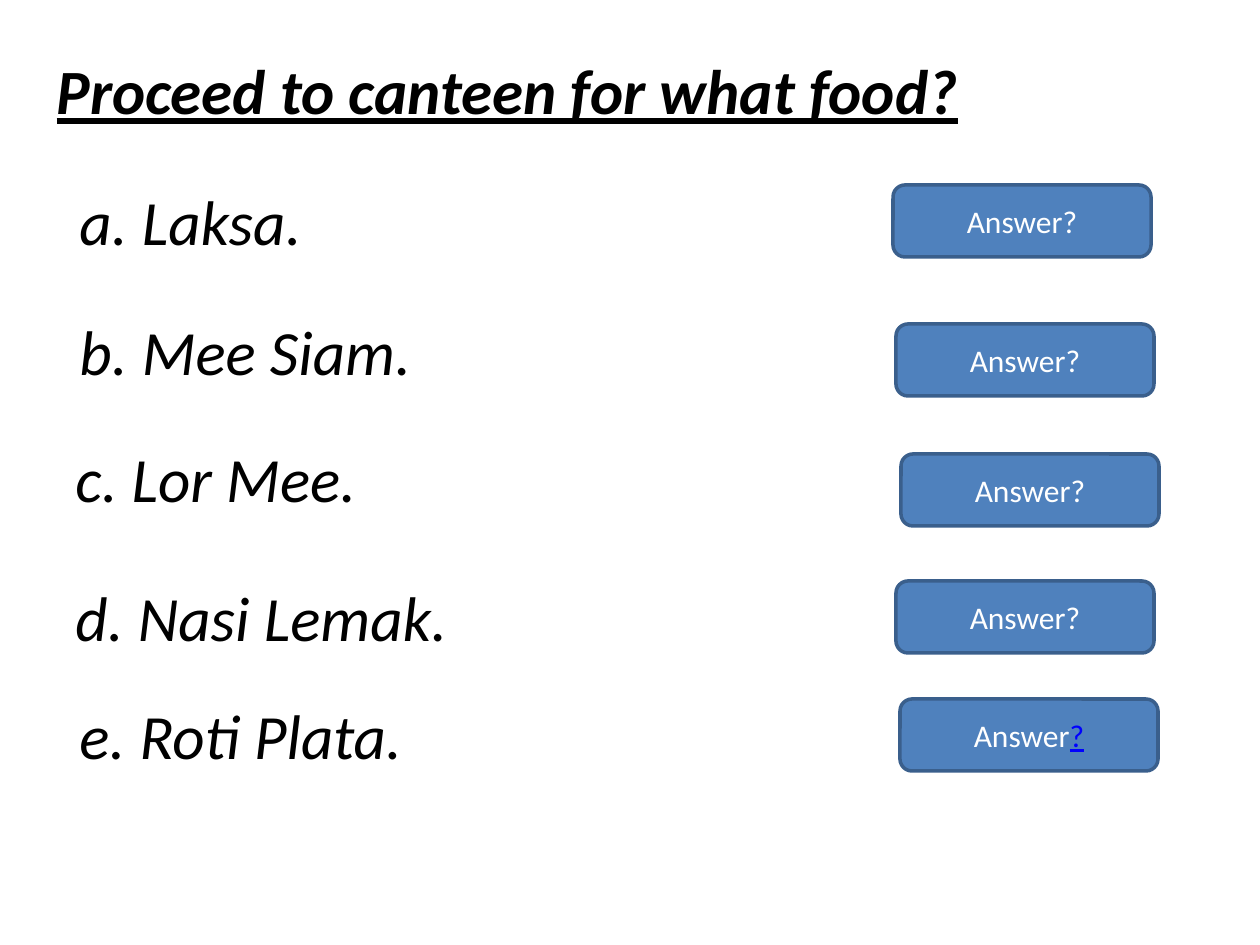
"""Build a quiz slide with five food options and an answer button for each."""
from pptx import Presentation
from pptx.dml.color import RGBColor
from pptx.enum.shapes import MSO_SHAPE
from pptx.enum.text import MSO_ANCHOR, MSO_AUTO_SIZE, PP_ALIGN
from pptx.util import Pt

ROUNDED = MSO_SHAPE.ROUNDED_RECTANGLE
TOP, MIDDLE = MSO_ANCHOR.TOP, MSO_ANCHOR.MIDDLE
LEFT, CENTER = PP_ALIGN.LEFT, PP_ALIGN.CENTER
NO_FIT = MSO_AUTO_SIZE.NONE

TITLE = "Proceed to canteen for what food?"
OPTIONS = [
    {"text": "a. Laksa.", "at": (67, 176), "button": (893, 185)},
    {"text": "b. Mee Siam.", "at": (67, 306), "button": (896, 324)},
    {"text": "c. Lor Mee.", "at": (63, 433), "button": (901, 454)},
    {"text": "d. Nasi Lemak.", "at": (63, 572), "button": (896, 581)},
    {"text": "e. Roti Plata.", "at": (67, 690), "button": (900, 699)},
]
COLORS = {"black": "000000", "white": "FFFFFF", "fill": "4F81BD",
          "line": "3A5F8C", "link": "0000FF"}
OPTION_FONT = {"name": "Calibri", "size": Pt(36), "italic": True}
TITLE_FONT = {**OPTION_FONT, "bold": True, "underline": True}
BUTTON_FONT = {"name": "Calibri", "size": Pt(18)}
LINK_FONT = {**BUTTON_FONT, "underline": True}

SLIDE_SIZE = (1260, 945)
TITLE_AT, TITLE_SIZE = (44, 45), (1002, 89)
OPTION_SIZE = (833, 89)
BUTTON_SIZE = (258, 72)


def px(length):
    return round(length * 914400 / 126)


def color(name):
    return RGBColor.from_string(COLORS[name])


def place(shape, at, size):
    shape.left, shape.top, shape.width, shape.height = map(px, at + size)


def write(shape, spans, anchor, align):
    frame = shape.text_frame
    layout = {"word_wrap": True, "auto_size": NO_FIT, "vertical_anchor": anchor}
    for key, value in layout.items():
        setattr(frame, key, value)
    para = frame.paragraphs[0]
    para.alignment = align
    for text, font, ink in spans:
        span = para.add_run()
        span.text = text
        for key, value in font.items():
            setattr(span.font, key, value)
        span.font.color.rgb = color(ink)


def add_button(page, at, spans):
    button = page.shapes.add_shape(ROUNDED, *map(px, at + BUTTON_SIZE))
    button.shadow.inherit = False
    button.fill.solid()
    button.fill.fore_color.rgb = color("fill")
    button.line.color.rgb = color("line")
    button.line.width = Pt(2)
    write(button, spans, MIDDLE, CENTER)


def main():
    deck = Presentation()
    deck.slide_width, deck.slide_height = map(px, SLIDE_SIZE)
    page = deck.slides.add_slide(deck.slide_layouts[5])

    title = page.shapes.title
    place(title, TITLE_AT, TITLE_SIZE)
    write(title, [(TITLE, TITLE_FONT, "black")], TOP, LEFT)

    for option in OPTIONS:
        box = page.shapes.add_textbox(*map(px, option["at"] + OPTION_SIZE))
        write(box, [(option["text"], OPTION_FONT, "black")], TOP, LEFT)

    plain = [("Answer?", BUTTON_FONT, "white")]
    linked = [("Answer", BUTTON_FONT, "white"), ("?", LINK_FONT, "link")]
    for option in OPTIONS:
        add_button(page, option["button"], linked if option is OPTIONS[-1] else plain)

    deck.save("out.pptx")


if __name__ == "__main__":
    main()
